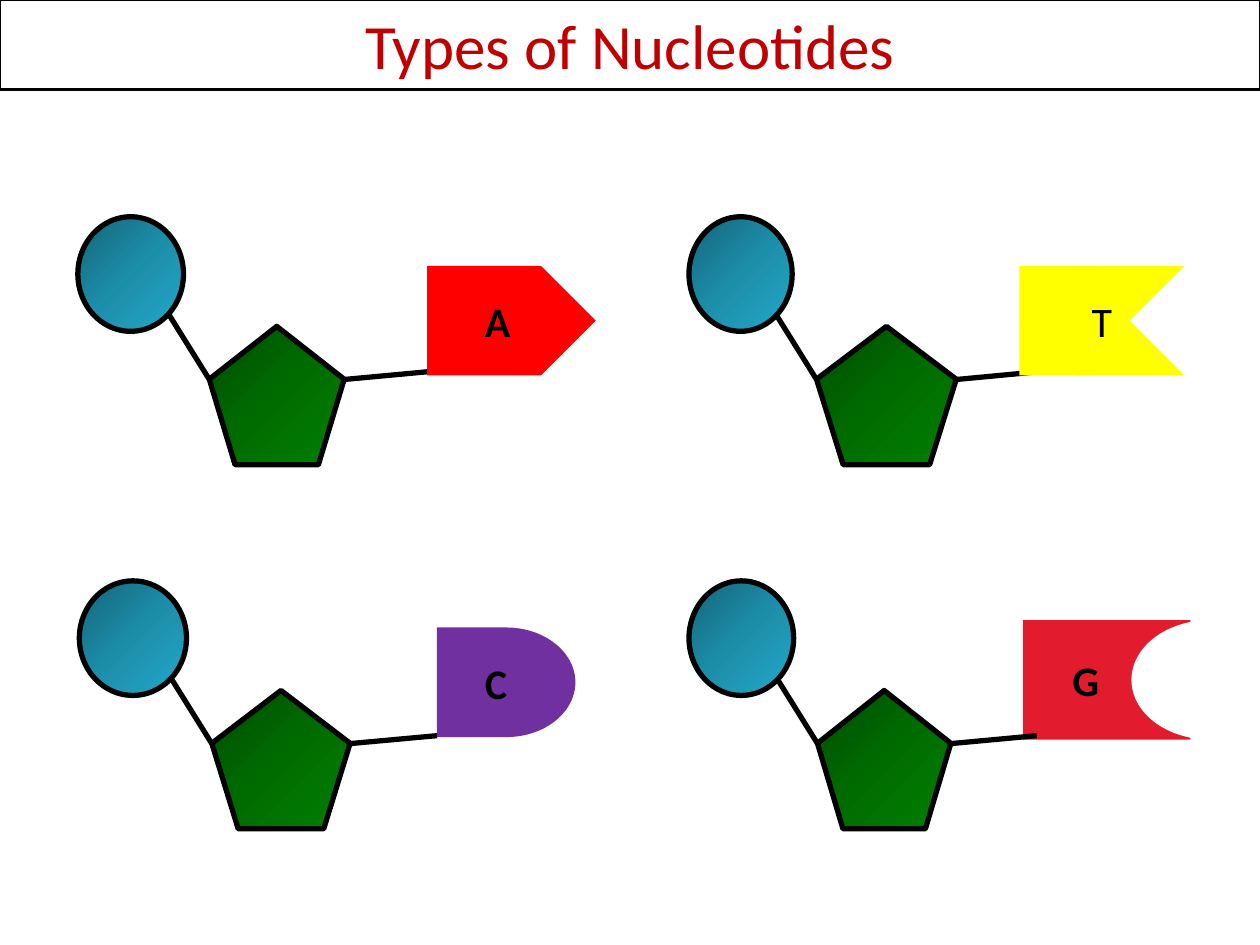
import copy

import lxml.etree
import pptx
import pptx.dml.color
import pptx.enum.shapes
import pptx.enum.text
import pptx.oxml.ns
import pptx.util

Cm = pptx.util.Cm
Pt = pptx.util.Pt
SHAPE = pptx.enum.shapes.MSO_SHAPE
ALIGN = pptx.enum.text.PP_ALIGN


def color(hex_value):
    return pptx.dml.color.RGBColor.from_string(hex_value)


def add_part(kind, left, top, width, height, fills):
    part = slide.shapes.add_shape(kind, Cm(left), Cm(top), Cm(width), Cm(height))
    part.shadow.inherit = False
    if len(fills) == 1:
        part.fill.solid()
        part.fill.fore_color.rgb = color(fills[0])
        part.line.fill.background()
        return part
    part.fill.gradient()
    part.fill.gradient_angle = 315
    stop_list = part.element.spPr.find(".//" + pptx.oxml.ns.qn("a:gsLst"))
    stop_list.insert(1, copy.deepcopy(stop_list[0]))
    for stop, position, hex_value in zip(part.fill.gradient_stops, (0, 0.5, 1), fills):
        stop.position = position
        stop.color.rgb = color(hex_value)
    part.line.color.rgb = color("000000")
    part.line.width = Pt(3)
    return part


PHOSPHATE = ["146478", "1D8EAA", "22A9CA"]
SUGAR = ["004C00", "006C00", "008000"]
ROW_STEP = 7.34

deck = pptx.Presentation()
deck.slide_width, deck.slide_height = Cm(25.4), Cm(19.05)
slide = deck.slides.add_slide(deck.slide_layouts[5])

title = slide.shapes.title
title.left, title.top, title.width, title.height = Cm(0), Cm(0), Cm(25.4), Cm(1.8)
title.fill.solid()
title.fill.fore_color.rgb = color("FFFFFF")
title.line.color.rgb = color("000000")
title.line.width = Pt(1.5)
title.text_frame.text = "Types of Nucleotides"
title.text_frame.vertical_anchor = pptx.enum.text.MSO_ANCHOR.MIDDLE
heading = title.text_frame.paragraphs[0]
heading.alignment = ALIGN.CENTER
heading.font.size = Pt(36)
heading.font.name = "Calibri"
heading.font.color.rgb = color("C00000")

guanine = add_part(SHAPE.RECTANGLE, 20.62, 12.5, 3.38, 2.41, ["E31B2E"])
guanine_notch = add_part(SHAPE.FLOWCHART_DELAY, 22.81, 12.5, 3.18, 2.41, ["FFFFFF"])

backbones = [
    (0, 1.57, 2.13, 4.22, 2.72, 8.66),
    (0, 13.89, 2.08, 16.46, 2.82, 20.98),
    (1, 13.89, 2.11, 16.48, 2.69, 20.9),
    (1, 1.6, 2.16, 4.27, 2.79, 8.81),
]
for row, phosphate_left, phosphate_width, sugar_left, sugar_width, base_x in backbones:
    drop = row * ROW_STEP
    add_part(SHAPE.OVAL, phosphate_left, 4.37 + drop, phosphate_width, 2.31, PHOSPHATE)
    add_part(SHAPE.REGULAR_PENTAGON, sugar_left, 6.58 + drop, sugar_width, 2.79, SUGAR)
    bond_y = 7.65 + drop
    for start_x, end_x, end_y in [
        (sugar_left, sugar_left - 0.81, bond_y - 1.3),
        (sugar_left + sugar_width, base_x, bond_y - 0.16),
    ]:
        bond = slide.shapes.add_connector(
            pptx.enum.shapes.MSO_CONNECTOR.STRAIGHT,
            Cm(start_x), Cm(bond_y), Cm(end_x), Cm(end_y),
        )
        bond.line.color.rgb = color("000000")
        bond.line.width = Pt(3)
        lxml.etree.SubElement(bond.element.spPr, pptx.oxml.ns.qn("a:effectLst"))

adenine = add_part(SHAPE.PENTAGON, 8.61, 5.36, 3.4, 2.21, ["FF0000"])
add_part(SHAPE.RECTANGLE, 20.55, 5.36, 1.57, 2.21, ["FFFF00"])
thymine = add_part(SHAPE.CHEVRON, 20.55, 5.36, 3.33, 2.21, ["FFFF00"])
cytosine = add_part(SHAPE.FLOWCHART_DELAY, 8.81, 12.65, 2.79, 2.21, ["7030A0"])

for flipped in (thymine, guanine_notch):
    flipped.element.spPr.xfrm.set("flipH", "1")

for base, letter, bold, alignment in [
    (adenine, "A", True, ALIGN.CENTER),
    (thymine, "T", False, ALIGN.CENTER),
    (guanine, "G", True, ALIGN.LEFT),
    (cytosine, "C", True, ALIGN.CENTER),
]:
    base.text_frame.text = letter
    base.text_frame.vertical_anchor = pptx.enum.text.MSO_ANCHOR.MIDDLE
    label = base.text_frame.paragraphs[0]
    label.alignment = alignment
    label.font.size = Pt(24)
    label.font.name = "Calibri"
    label.font.bold = bold
    label.font.color.rgb = color("000000")
guanine.text_frame.margin_left = Cm(1)

deck.save("out.pptx")
